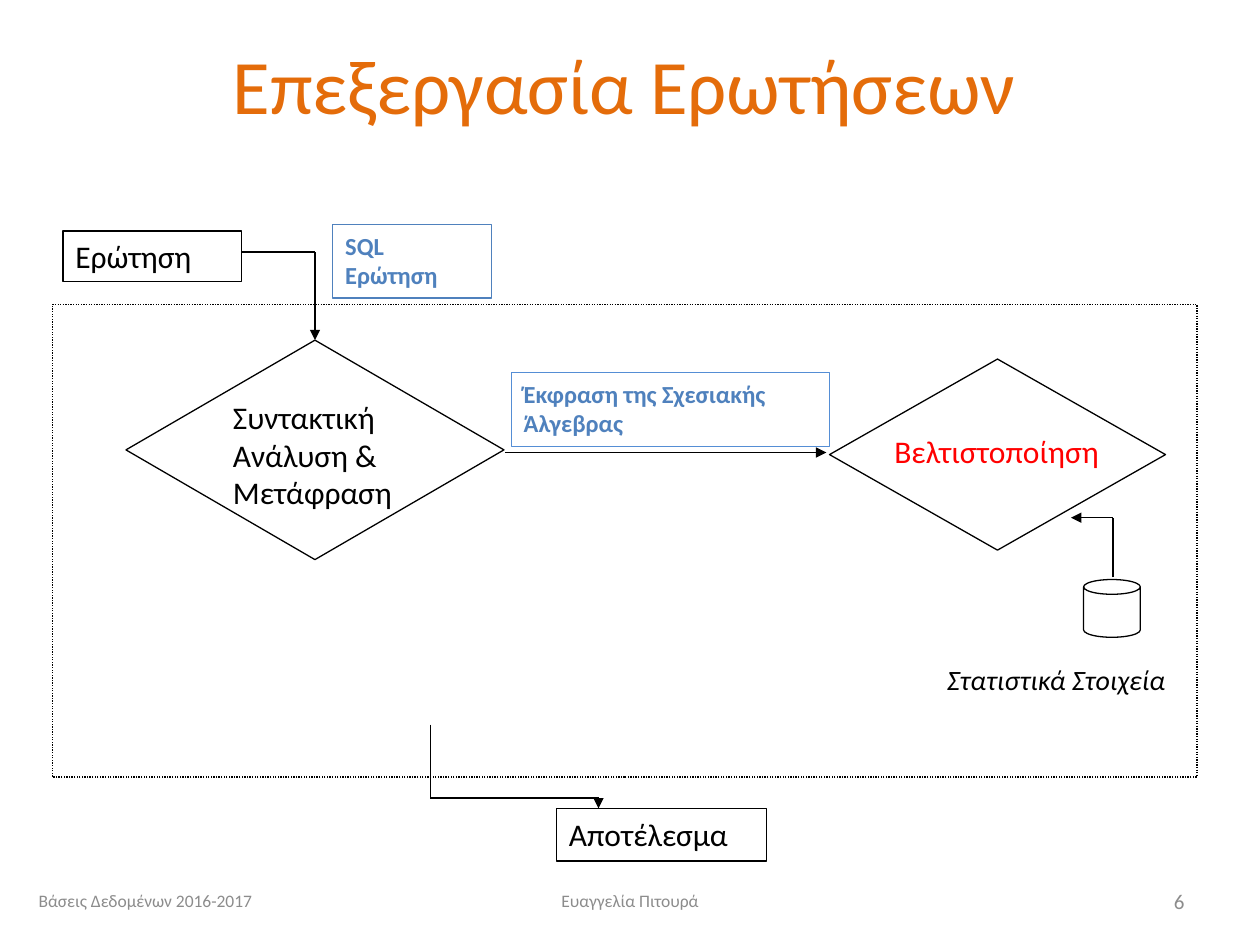
from lxml import etree
from pptx import Presentation, util as u
from pptx.dml.color import RGBColor
from pptx.enum import dml, shapes, text
from pptx.oxml.ns import qn

# Grid: 120 columns by 90 rows on a 10 x 7.5 inch slide
COLS, ROWS = 120, 90
WIDTH, HEIGHT = u.Inches(10), u.Inches(7.5)

BLACK, RED, BLUE, SKY = "000000", "FF0000", "4F81BD", "558ED5"
ORANGE, GREY = "E46C0A", "8C8C8C"
LEFT, CENTER, RIGHT = text.PP_ALIGN.LEFT, text.PP_ALIGN.CENTER, text.PP_ALIGN.RIGHT
RECT, DIAMOND, CAN = (shapes.MSO_SHAPE.RECTANGLE, shapes.MSO_SHAPE.DIAMOND,
                      shapes.MSO_SHAPE.CAN)

# Content: place is (column, row, columns, rows)
TITLE = ("Επεξεργασία Ερωτήσεων", (5.5, 0.5, 108, 15), 44, ORANGE, CENTER)
FOOTERS = [
    ("Βάσεις Δεδομένων 2016-2017", (2.5, 83.4, 28, 4.8), 10, GREY, LEFT),
    ("Ευαγγελία Πιτουρά", (41, 83.4, 38, 4.8), 10, GREY, CENTER),
    ("6", (86, 83.4, 28, 4.8), 12, GREY, RIGHT),
]
SYSTEM_FRAME = (5, 29, 109, 45)
PARSER = (12, 32.4, 36, 20.9)
OPTIMIZER = (79, 34.2, 32, 18.2)
STATISTICS = (103.2, 55.2, 5.4, 5.5)
ENDPOINTS = [
    ("Ερώτηση", (6, 22, 17, 4.8)),
    ("Αποτέλεσμα", (53, 77, 20, 5)),
]
DATA_LABELS = [
    ("SQL Ερώτηση", (31.7, 21.4, 15.1, 7), BLUE),
    ("Έκφραση της Σχεσιακής Άλγεβρας", (48.7, 35.5, 30.3, 7), SKY),
]
STEP_LABELS = [
    ("Συντακτική Ανάλυση & Μετάφραση", (21, 37.3, 27, 12), 18, BLACK, False),
    ("Βελτιστοποίηση", (84, 40.6, 36, 4.8), 18, RED, False),
    ("Στατιστικά Στοιχεία", (89, 62.5, 26, 4.4), 16, BLACK, True),
]
# Routes of (column, row) points; the last stretch carries the arrowhead
QUERY_ROUTE = [(23, 24), (30, 24), (30, 32)]
ROUTES = [
    [(48.1, 43.1), (78.7, 43.1)],
    [(106, 55), (106, 49.3), (102, 49.3)],
    [(41, 69), (41, 76), (57, 76), (57, 77)],
]

prs = Presentation()
prs.slide_width, prs.slide_height = WIDTH, HEIGHT
slide = prs.slides.add_slide(prs.slide_layouts[6])


def color(hex_code):
    return RGBColor.from_string(hex_code)


def grid(*lengths):
    """Turn alternating columns and rows into slide lengths."""
    units = (WIDTH / COLS, HEIGHT / ROWS)
    return [round(n * units[i % 2]) for i, n in enumerate(lengths)]


def write(holder, words, size, hex_code, align=LEFT, bold=False, italic=False,
          anchor=text.MSO_ANCHOR.TOP):
    frame = holder.text_frame
    frame.word_wrap = True
    frame.vertical_anchor = anchor
    line = frame.paragraphs[0]
    line.text, line.alignment = words, align
    font = line.font
    font.name, font.size, font.bold, font.italic = "Calibri", u.Pt(size), bold, italic
    font.color.rgb = color(hex_code)


def add_label(words, place, size, hex_code, **style):
    write(slide.shapes.add_textbox(*grid(*place)), words, size, hex_code, **style)


def add_outline(kind, place, hex_code=BLACK):
    outline = slide.shapes.add_shape(kind, *grid(*place))
    outline.shadow.inherit = False
    outline.fill.background()
    outline.line.color.rgb = color(hex_code)
    outline.line.width = u.Pt(0.75)
    return outline


def add_route(points):
    for start, end in zip(points, points[1:]):
        stretch = slide.shapes.add_connector(
            shapes.MSO_CONNECTOR.STRAIGHT, *grid(*start, *end))
        stretch.line.color.rgb = color(BLACK)
        stretch.line.width = u.Pt(0.75)
        properties = stretch._element.spPr
        etree.SubElement(properties, qn("a:effectLst"))
    etree.SubElement(properties.find(qn("a:ln")), qn("a:tailEnd"), type="triangle")
    return stretch


# Frame and process steps
add_outline(RECT, SYSTEM_FRAME).line.dash_style = dml.MSO_LINE.ROUND_DOT
parser = add_outline(DIAMOND, PARSER)
add_outline(DIAMOND, OPTIMIZER)
add_outline(CAN, STATISTICS).adjustments[0] = 0.26
for words, place, size, hex_code, italic in STEP_LABELS:
    add_label(words, place, size, hex_code, italic=italic)

# Boxes with text
for words, place in ENDPOINTS:
    write(add_outline(RECT, place), words, 18, BLACK)
for words, place, border in DATA_LABELS:
    write(add_outline(RECT, place, border), words, 14, BLUE, bold=True)

# Arrows
add_route(QUERY_ROUTE).end_connect(parser, 0)
for route in ROUTES:
    add_route(route)

# Title and footers
for words, place, size, hex_code, align in [TITLE, *FOOTERS]:
    add_label(words, place, size, hex_code, align=align,
              anchor=text.MSO_ANCHOR.MIDDLE)

prs.save("out.pptx")
